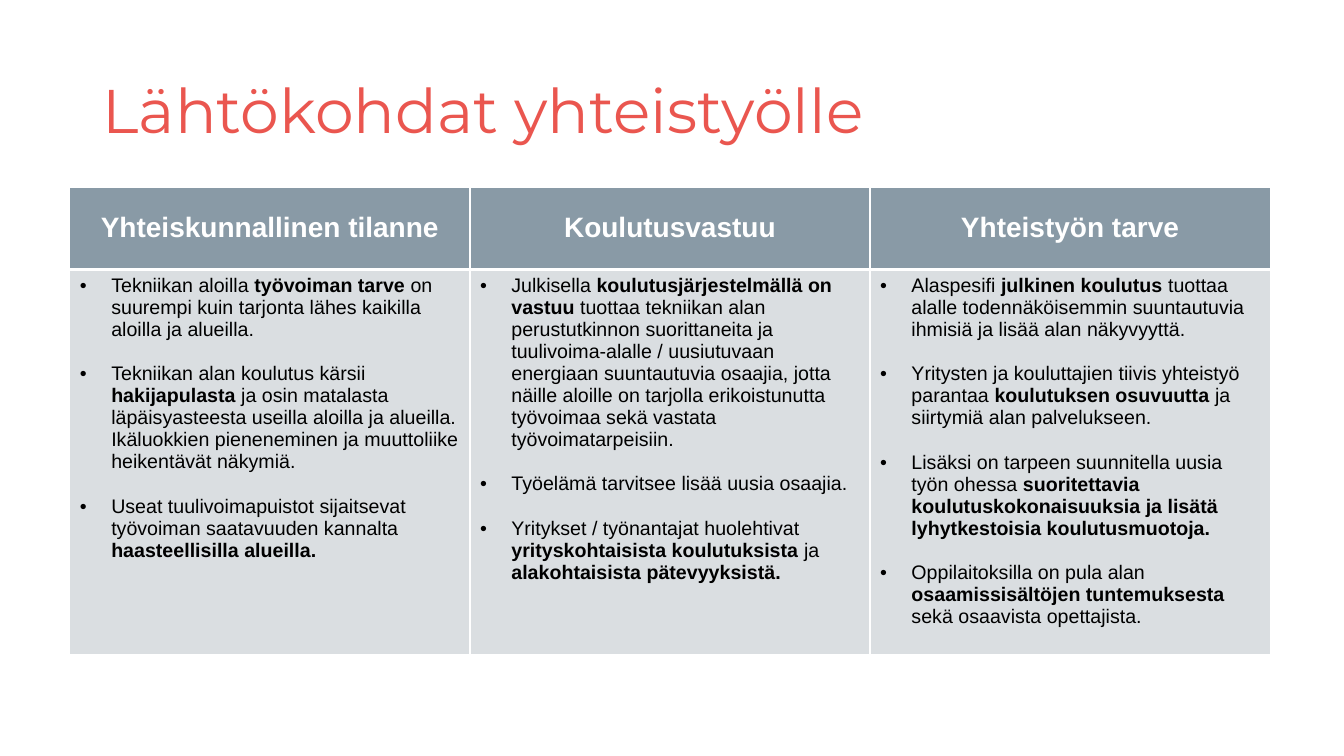
from lxml.etree import SubElement
from pptx import Presentation
from pptx.dml.color import RGBColor
from pptx.enum.text import MSO_ANCHOR, PP_ALIGN
from pptx.oxml.ns import qn
from pptx.util import Cm, Pt

CORAL = RGBColor(0xEA, 0x56, 0x4F)
SLATE = RGBColor(0x89, 0x9A, 0xA6)
MIST = RGBColor(0xDA, 0xDE, 0xE1)
WHITE = RGBColor(0xFF, 0xFF, 0xFF)
BLACK = RGBColor(0, 0, 0)

STARTING_POINTS = {
    "Yhteiskunnallinen tilanne": [
        "Tekniikan aloilla **työvoiman tarve **on suurempi kuin tarjonta lähes "
        "kaikilla aloilla ja alueilla.",
        "Tekniikan alan koulutus kärsii **hakijapulasta** ja osin matalasta "
        "läpäisyasteesta useilla aloilla ja alueilla. Ikäluokkien pieneneminen "
        "ja muuttoliike heikentävät näkymiä.",
        "Useat tuulivoimapuistot sijaitsevat työvoiman saatavuuden kannalta "
        "**haasteellisilla alueilla.**",
    ],
    "Koulutusvastuu": [
        "Julkisella **koulutusjärjestelmällä on vastuu** tuottaa tekniikan alan "
        "perustutkinnon suorittaneita ja tuulivoima-alalle / uusiutuvaan "
        "energiaan suuntautuvia osaajia, jotta näille aloille on tarjolla "
        "erikoistunutta työvoimaa sekä vastata työvoimatarpeisiin.",
        "Työelämä tarvitsee lisää uusia osaajia.",
        "Yritykset / työnantajat huolehtivat **yrityskohtaisista koulutuksista "
        "**ja **alakohtaisista pätevyyksistä.**",
    ],
    "Yhteistyön tarve": [
        "Alaspesifi **julkinen koulutus **tuottaa alalle todennäköisemmin "
        "suuntautuvia ihmisiä ja lisää alan näkyvyyttä.",
        "Yritysten ja kouluttajien tiivis yhteistyö parantaa **koulutuksen "
        "osuvuutta** ja siirtymiä alan palvelukseen.",
        "Lisäksi on tarpeen suunnitella uusia työn ohessa **suoritettavia "
        "koulutuskokonaisuuksia ja lisätä lyhytkestoisia koulutusmuotoja.**",
        "Oppilaitoksilla on pula alan **osaamissisältöjen tuntemuksesta **sekä "
        "osaavista opettajista.",
    ],
}


class SlideBuilder:
    """Holds the style and the current slide, and adds each kind of element."""

    title_font, body_font = "Montserrat", "Arial"
    title_size, header_size, body_size = Pt(44), Pt(20), Pt(14)
    thin, thick = Pt(1), Pt(3)

    def __init__(self, presentation):
        self.slide = presentation.slides.add_slide(presentation.slide_layouts[5])

    def style(self, run, font, size, color, bold=False):
        run.font.name, run.font.size, run.font.bold = font, size, bold
        run.font.color.rgb = color

    def title(self, wording, left, top, width, height):
        heading = self.slide.shapes.title
        heading.left, heading.top, heading.width, heading.height = left, top, width, height
        frame = heading.text_frame
        frame.text = wording
        frame.word_wrap = True
        frame.vertical_anchor = MSO_ANCHOR.MIDDLE
        paragraph = frame.paragraphs[0]
        paragraph.alignment = PP_ALIGN.LEFT
        paragraph.line_spacing = 0.9
        self.style(paragraph.runs[0], self.title_font, self.title_size, CORAL)

    def table(self, columns, left, top, width, header_height, body_height):
        grid = self.slide.shapes.add_table(
            2, len(columns), left, top, width, header_height + body_height
        ).table
        grid.rows[0].height, grid.rows[1].height = header_height, body_height
        for index, (header, points) in enumerate(columns.items()):
            self.header_cell(grid.cell(0, index), header)
            self.body_cell(grid.cell(1, index), points)

    def header_cell(self, cell, wording):
        self.borders(cell, top=self.thin, bottom=self.thick)
        cell.fill.solid()
        cell.fill.fore_color.rgb = SLATE
        cell.vertical_anchor = MSO_ANCHOR.MIDDLE
        cell.text_frame.text = wording
        paragraph = cell.text_frame.paragraphs[0]
        paragraph.alignment = PP_ALIGN.CENTER
        self.style(paragraph.runs[0], self.body_font, self.header_size, WHITE, True)

    def body_cell(self, cell, points):
        self.borders(cell, top=self.thick, bottom=self.thin)
        cell.fill.solid()
        cell.fill.fore_color.rgb = MIST
        frame = cell.text_frame
        for index, point in enumerate(points):
            paragraph = frame.add_paragraph() if index else frame.paragraphs[0]
            self.bullet(paragraph)
            if index:
                paragraph.space_before = Pt(16)
            for part, wording in enumerate(point.split("**")):
                if wording:
                    run = paragraph.add_run()
                    run.text = wording
                    self.style(run, self.body_font, self.body_size, BLACK, part % 2 == 1)

    def bullet(self, paragraph):
        properties = paragraph._p.get_or_add_pPr()
        properties.set("marL", str(Cm(0.79)))
        properties.set("indent", str(-Cm(0.79)))
        color = SubElement(properties, qn("a:buClr"))
        SubElement(color, qn("a:srgbClr"), val=str(BLACK))
        SubElement(properties, qn("a:buFont"), typeface=self.body_font)
        SubElement(properties, qn("a:buChar"), char="•")

    def borders(self, cell, top, bottom):
        properties = cell._tc.get_or_add_tcPr()
        widths = {"L": self.thin, "R": self.thin, "T": top, "B": bottom}
        for side, width in widths.items():
            line = SubElement(properties, qn(f"a:ln{side}"), w=str(width))
            fill = SubElement(line, qn("a:solidFill"))
            SubElement(fill, qn("a:srgbClr"), val=str(WHITE))


def main():
    presentation = Presentation()
    presentation.slide_width, presentation.slide_height = Cm(33.87), Cm(19.05)
    builder = SlideBuilder(presentation)
    builder.title("Lähtökohdat yhteistyölle", Cm(2.33), Cm(1.01), Cm(29.21), Cm(3.68))
    builder.table(STARTING_POINTS, Cm(1.76), Cm(4.71), Cm(30.25), Cm(2.08), Cm(9.7))
    presentation.save("out.pptx")


if __name__ == "__main__":
    main()
